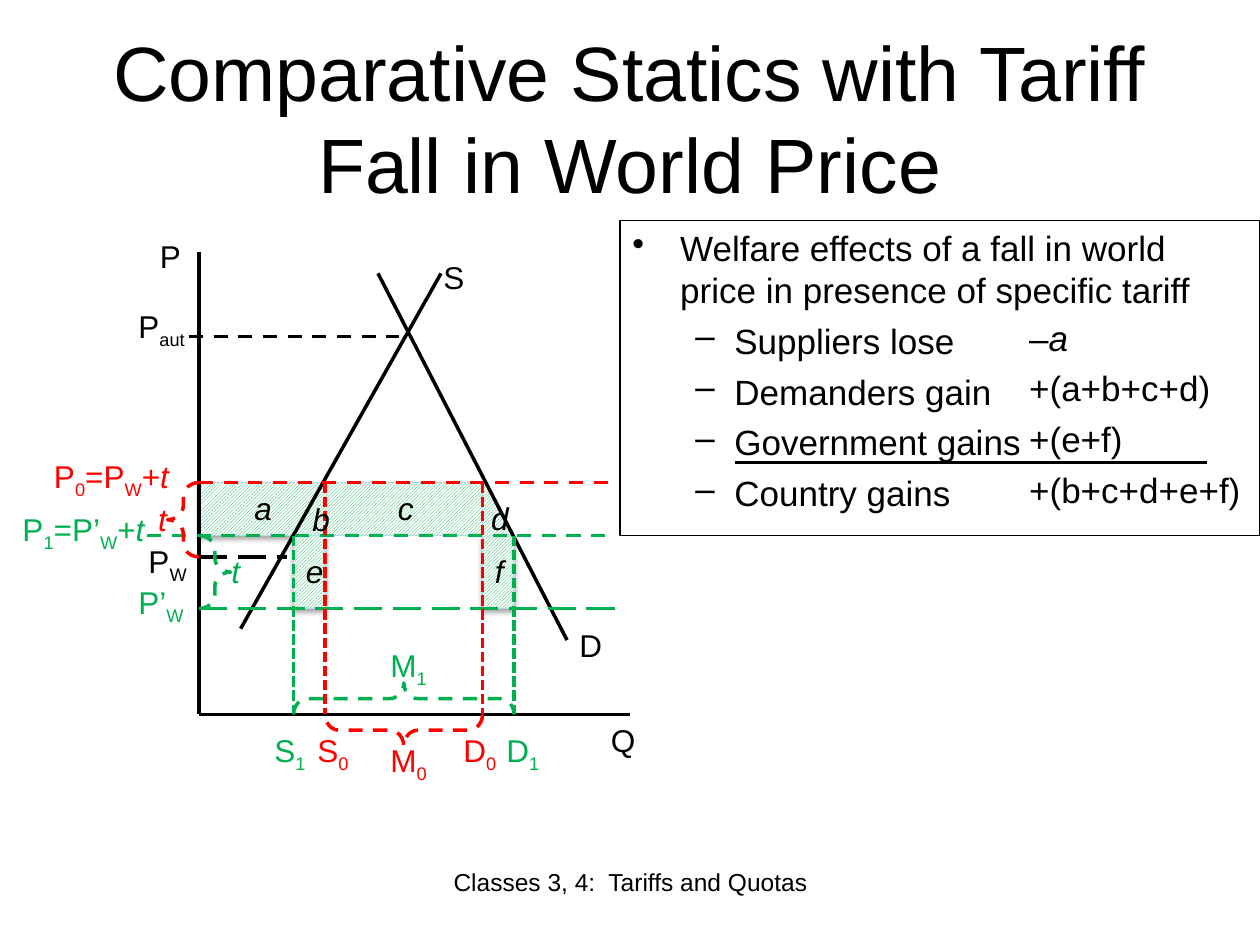
from dataclasses import dataclass

import pptx
import pptx.dml.color
import pptx.enum.dml
import pptx.enum.shapes
import pptx.enum.text
import pptx.oxml
import pptx.oxml.ns
import pptx.util

Inches = pptx.util.Inches
Pt = pptx.util.Pt
SHAPE = pptx.enum.shapes.MSO_SHAPE
DASH = pptx.enum.dml.MSO_LINE
CENTER = pptx.enum.text.PP_ALIGN.CENTER


@dataclass(frozen=True)
class Theme:
    font: str = "Arial"
    black: str = "000000"
    white: str = "FFFFFF"
    red: str = "FF0000"
    green: str = "00B050"
    edge: str = "B6DCDF"
    title: int = 44
    body: int = 20
    label: int = 18
    footer: int = 14
    stroke: float = 2
    hairline: float = 0.75


@dataclass(frozen=True)
class Box:
    left: float
    top: float
    width: float
    height: float

    def inches(self):
        return [Inches(v) for v in (self.left, self.top, self.width, self.height)]

    def inner(self, x, y, width, height):
        return Box(self.left + x, self.top + y, width, height)


THEME = Theme()


def rgb(value):
    return pptx.dml.color.RGBColor.from_string(value)


def add_drawing_xml(parent, body):
    namespace = pptx.oxml.ns.nsdecls("a")
    parent.append(pptx.oxml.parse_xml(body.replace(" ns", " " + namespace, 1)))


def write(para, text, size=THEME.label, color=THEME.black, align=None, before=0):
    """Fill a paragraph; '|' parts spans, '_' marks a subscript and '/' italics."""
    para.alignment = align
    para.space_before = Pt(before)
    for piece in text.split("|"):
        span = para.add_run()
        span.text = piece.lstrip("_/")
        span.font.name = THEME.font
        span.font.size = Pt(size)
        span.font.color.rgb = rgb(color)
        span.font.italic = piece.startswith("/")
        if piece.startswith("_"):
            span.font._element.set("baseline", "-25000")


def add_text(page, box, text, **style):
    frame = page.shapes.add_textbox(*box.inches()).text_frame
    frame.word_wrap = True
    write(frame.paragraphs[0], text, **style)


def add_line(page, box, start, end, color=THEME.black, dash=None):
    ends = [Inches(v) for x, y in (start, end) for v in (box.left + x, box.top + y)]
    line = page.shapes.add_connector(pptx.enum.shapes.MSO_CONNECTOR.STRAIGHT, *ends)
    line.line.color.rgb = rgb(color)
    line.line.width = Pt(THEME.stroke)
    if dash:
        line.line.dash_style = dash
    add_drawing_xml(line._element.spPr, "<a:effectLst ns/>")


def add_area(page, box, kind=SHAPE.RECTANGLE, shadow=False):
    area = page.shapes.add_shape(kind, *box.inches())
    area.shadow.inherit = False
    area.fill.patterned()
    area.fill.pattern = pptx.enum.dml.MSO_PATTERN.DARK_UPWARD_DIAGONAL
    area.fill.fore_color.rgb = rgb(THEME.green)
    area.fill.back_color.rgb = rgb(THEME.white)
    if kind == SHAPE.RECTANGLE:
        area.line.color.rgb = rgb(THEME.edge)
        area.line.width = Pt(THEME.hairline)
    else:
        area.line.fill.background()
    if shadow:
        effects = area._element.spPr.find(pptx.oxml.ns.qn("a:effectLst"))
        add_drawing_xml(effects, '<a:outerShdw ns blurRad="39370" dist="22860" dir="5400000">'
                        f'<a:srgbClr val="{THEME.black}"><a:alpha val="35000"/></a:srgbClr>'
                        '</a:outerShdw>')


def add_brace(page, box, rotation, color):
    """Draw a brace that covers the box once it is turned."""
    if rotation in (90, 270):
        shift = (box.width - box.height) / 2
        box = box.inner(shift, -shift, box.height, box.width)
    brace = page.shapes.add_shape(SHAPE.LEFT_BRACE, *box.inches())
    brace.rotation = rotation
    brace.adjustments[0] = 0.444
    brace.shadow.inherit = False
    brace.fill.background()
    brace.line.color.rgb = rgb(color)
    brace.line.width = Pt(THEME.stroke)
    brace.line.dash_style = DASH.DASH


def add_title(page, box, lines):
    title = page.shapes.title
    title.left, title.top, title.width, title.height = box.inches()
    frame = title.text_frame
    frame.auto_size = pptx.enum.text.MSO_AUTO_SIZE.NONE
    frame.vertical_anchor = pptx.enum.text.MSO_ANCHOR.MIDDLE
    para = frame.paragraphs[0]
    for index, line in enumerate(lines):
        if index:
            para.add_line_break()
        write(para, line, size=THEME.title, align=CENTER)


def add_diagram(page, box):
    """Draw the market; offsets run from the top of the price axis."""
    red, green = THEME.red, THEME.green
    aut, p0, p1, pw, pw_new, base = 0.67, 1.83, 2.25, 2.42, 2.83, box.height
    s1, s0, d0, d1 = 0.75, 1, 2.25, 2.5

    # Welfare areas
    add_area(page, box.inner(0, p0, s1, p1 - p0), shadow=True)
    for x in (s1, d0):
        add_area(page, box.inner(x, p1, 0.25, pw_new - p1), shadow=True)
    add_area(page, box.inner(0, p0, d0, p1 - p0))
    add_area(page, box.inner(d0, p0, 0.24, p1 - p0), SHAPE.RIGHT_TRIANGLE)

    # Axes, supply and demand, price levels, quantities
    lines = [
        ((0, base), (box.width, base)),
        ((0, base), (0, 0)),
        ((0.33, 2.99), (1.92, 0.17)),
        ((2.92, 3.08), (1.42, 0.17)),
        ((0, pw), (0.7, pw), THEME.black, DASH.LONG_DASH),
        ((0, p0), (3.25, p0), red, DASH.DASH),
        ((-0.08, aut), (1.59, aut), THEME.black, DASH.DASH),
        ((0, pw_new), (3.34, pw_new), green, DASH.LONG_DASH),
        ((-0.41, p1), (3.25, p1), green, DASH.DASH),
    ]
    for color, top, quantities in ((red, p0, (s0, d0)), (green, p1, (s1, d1))):
        lines += [((x, top), (x, base), color, DASH.SQUARE_DOT) for x in quantities]
    for line in lines:
        add_line(page, box, *line)

    # Braces for the tariff and for imports
    add_brace(page, box.inner(-0.25, p0, 0.25, pw - p0), 0, red)
    add_brace(page, box.inner(0, p1, 0.25, pw_new - p1), 180, green)
    add_brace(page, box.inner(s0, base, d0 - s0, 0.25), 270, red)
    add_brace(page, box.inner(s1, base - 0.25, d1 - s1, 0.25), 90, green)

    # Labels of axes, curves, prices and quantities
    for x, y, width, text, color in [
        (-0.41, -0.17, 0.75, "P", THEME.black), (1.84, 0, 0.75, "S", THEME.black),
        (2.92, 2.92, 0.42, "D", THEME.black), (3.17, 3.67, 0.75, "Q", THEME.black),
        (-0.58, 0.39, 0.75, "P|_aut", THEME.black), (-0.5, 2.25, 0.58, "P|_W", THEME.black),
        (-1.25, 1.58, 1.25, "P|_0|=P|_W|+|/t", red),
        (-1.5, 2, 1.25, "P|_1|=P’|_W|+|/t", green), (-0.58, 2.58, 0.58, "P’|_W", green),
        (0.84, 3.75, 0.5, "S|_0", red), (2, 3.75, 0.5, "D|_0", red),
        (0.5, 3.75, 0.5, "S|_1", green), (2.34, 3.75, 0.5, "D|_1", green),
        (1.42, 3.83, 0.58, "M|_0", red), (1.42, 3.08, 0.58, "M|_1", green),
    ]:
        add_text(page, box.inner(x, y, width, 0.4), text, color=color)

    # Centred letters: the tariff and the areas
    for x, y, width, letter, color in [
        (-0.58, 1.92, 0.58, "t", red), (0, 2.33, 0.58, "t", green),
        (0.34, 1.83, 0.25, "a", THEME.black), (0.8, 1.92, 0.25, "b", THEME.black),
        (1.48, 1.83, 0.25, "c", THEME.black), (2.22, 1.91, 0.25, "d", THEME.black),
        (0.75, 2.33, 0.25, "e", THEME.black), (2.25, 2.33, 0.25, "f", THEME.black),
    ]:
        add_text(page, box.inner(x, y, width, 0.4), "/" + letter, color=color, align=CENTER)


def add_welfare(page, box, heading, effects):
    panel = page.shapes.add_textbox(*box.inches())
    panel.line.color.rgb = rgb(THEME.black)
    panel.line.width = Pt(THEME.hairline)
    amounts = page.shapes.add_textbox(*box.inner(3.15, 0.71, 1.93, 1.75).inches())
    for column in (panel, amounts):
        column.text_frame.word_wrap = True
    style = {"size": THEME.body, "before": 5}

    # Bulleted heading and effects
    rows = [(heading, "•", 0.38, 0.38)] + [(name, "–", 0.81, 0.31) for name, _ in effects]
    for index, (text, bullet, margin, hang) in enumerate(rows):
        frame = panel.text_frame
        para = frame.add_paragraph() if index else frame.paragraphs[0]
        write(para, text, **style)
        settings = para._p.get_or_add_pPr()
        settings.set("marL", str(Inches(margin)))
        settings.set("indent", str(-Inches(hang)))
        add_drawing_xml(settings, f'<a:buChar ns char="{bullet}"/>')

    # Amounts, level with the effects, and the line above the sum
    for index, (_, amount) in enumerate(effects):
        frame = amounts.text_frame
        para = frame.add_paragraph() if index else frame.paragraphs[0]
        write(para, amount, **style)
    add_line(page, box, (0.91, 1.92), (4.66, 1.92))


def main():
    deck = pptx.Presentation()
    deck.slide_width, deck.slide_height = Inches(10), Inches(7.5)
    page = deck.slides.add_slide(deck.slide_layouts[5])
    add_title(page, Box(0.5, 0.3, 9, 1.25),
              ["Comparative Statics with Tariff", "Fall in World Price"])
    add_diagram(page, Box(1.58, 2, 3.42, 3.67))
    add_welfare(page, Box(4.92, 1.75, 5.08, 2.5),
                "Welfare effects of a fall in world price in presence of specific tariff",
                [("Suppliers lose", "–|/a"), ("Demanders gain", "+(a+b+c+d)"),
                 ("Government gains", "+(e+f)"), ("Country gains", "+(b+c+d+e+f)")])
    add_text(page, Box(3.42, 6.83, 3.17, 0.52), "Classes 3, 4:  Tariffs and Quotas",
             size=THEME.footer, align=CENTER)
    deck.save("out.pptx")


if __name__ == "__main__":
    main()
